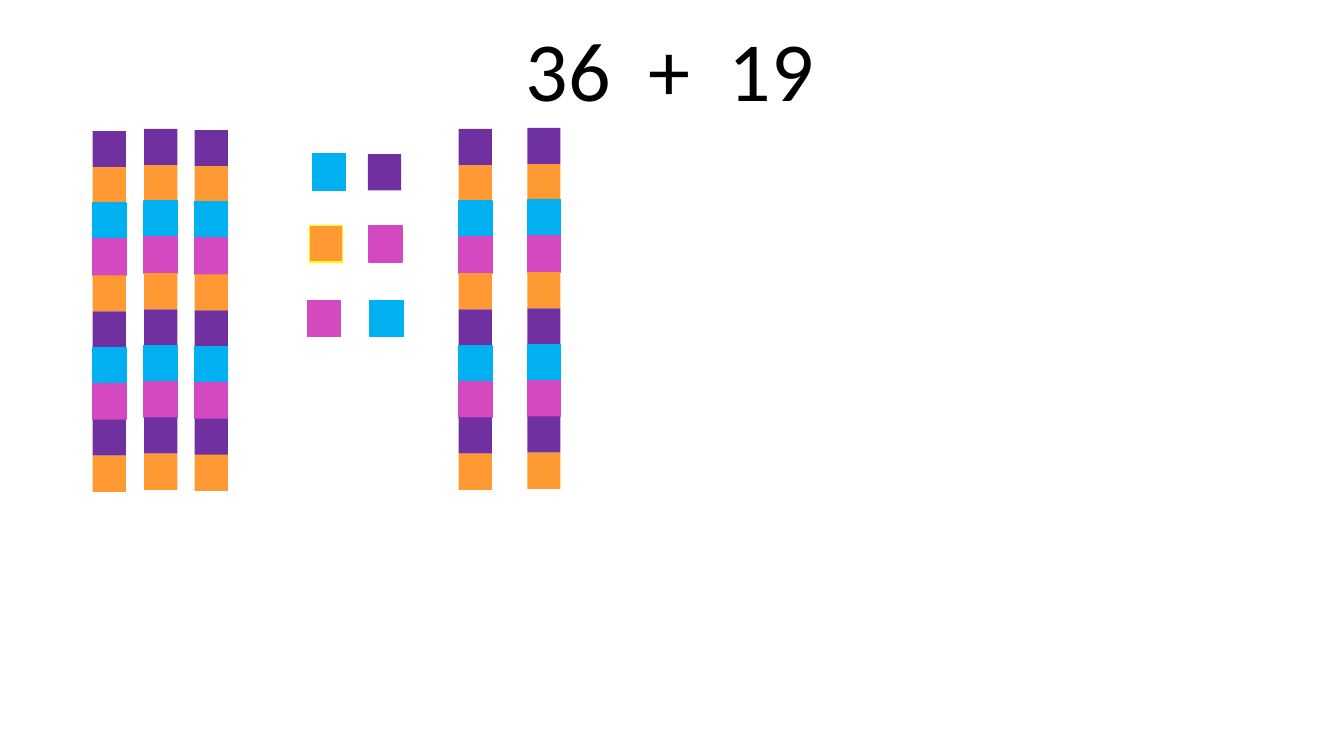
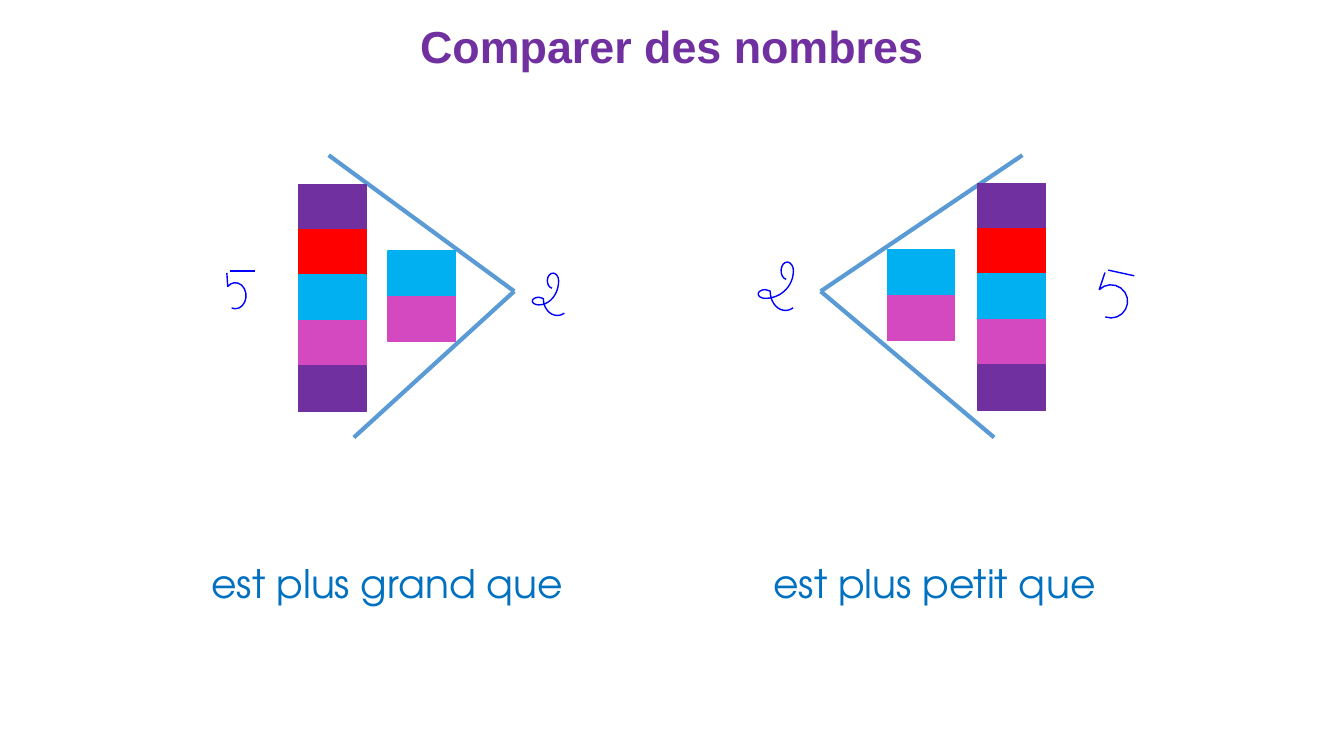
from math import cos, radians, sin

from lxml.etree import SubElement
from pptx import Presentation
from pptx.dml.color import RGBColor
from pptx.enum.shapes import MSO_CONNECTOR as Link, MSO_SHAPE as Shape
from pptx.enum.text import MSO_ANCHOR as Anchor, PP_ALIGN as Align
from pptx.oxml.ns import qn
from pptx.util import Inches, Pt

rgb = RGBColor.from_string
PURPLE, ORANGE, BLUE, PINK = "7030A0", "FF9933", "00B0F0", "D549C0"
RED, YELLOW, INK, WEDGE, LABEL = "FF0000", "FFFF00", "0000FF", "5B9BD5", "0070C0"


def write(slide, text, x, y, w, h, size, font, color, bold=False,
          align=Align.LEFT, anchor=Anchor.TOP, space=1.0):
    frame = slide.shapes.add_textbox(Inches(x), Inches(y), Inches(w), Inches(h)).text_frame
    frame.word_wrap = True
    frame.vertical_anchor = anchor
    para = frame.paragraphs[0]
    para.alignment, para.line_spacing = align, space
    run = para.add_run()
    run.text = text
    run.font.name, run.font.size, run.font.bold = font, Pt(size), bold
    run.font.color.rgb = rgb(color)


def stack(shapes, x, y, w, h, step, fills, edge=None, bare=()):
    """Pile cubes downward, edged in their own fill unless edge is given or the fill is bare."""
    for row, fill in enumerate(fills):
        cube = shapes.add_shape(Shape.RECTANGLE, Inches(x), Inches(y + row * step),
                                Inches(w), Inches(h))
        cube.shadow.inherit = False
        cube.fill.solid()
        cube.fill.fore_color.rgb = rgb(fill)
        if fill in bare and not edge:
            cube.line.fill.background()
        else:
            cube.line.color.rgb = rgb(edge or fill)
            cube.line.width = Pt(1)


deck = Presentation()
deck.slide_width, deck.slide_height = Inches(13.33), Inches(7.5)
blank = deck.slide_layouts[6]

# Addition: rods of ten and loose cubes
slide = deck.slides.add_slide(blank)
write(slide, "36  +  19", -0.02, 0.12, 13.33, 1.41, 60, "Calibri", "000000",
      align=Align.CENTER)

plain = (ORANGE, PURPLE)
wide, high = 0.33, 0.36
loose = [(3.1, 1.53, BLUE, None), (3.65, 1.53, PURPLE, None),
         (3.07, 2.24, ORANGE, YELLOW), (3.66, 2.24, PINK, None),
         (3.05, 2.98, PINK, None), (3.67, 2.98, BLUE, None)]
for x, y, fill, edge in loose:
    stack(slide.shapes, x, y, wide, high, 0, [fill], edge, plain)

ten = [PURPLE, ORANGE, BLUE, PINK, ORANGE, PURPLE, BLUE, PINK, PURPLE, ORANGE]
pitch = 3.22 / (len(ten) - 1)
for x, y in [(0.92, 1.3), (1.43, 1.28), (1.93, 1.29), (4.55, 1.28), (5.23, 1.27)]:
    rod = slide.shapes.add_group_shape()
    stack(rod.shapes, x, y, wide, high, pitch, ten, bare=plain)

# Comparison: two towers inside each wedge
slide = deck.slides.add_slide(blank)
write(slide, "Comparer des nombres", 0, 0.02, 13.33, 0.93, 32, "Arial", PURPLE,
      bold=True, align=Align.CENTER, anchor=Anchor.MIDDLE, space=0.9)

five, two = [PURPLE, RED, BLUE, PINK, PURPLE], [BLUE, PINK]
side, rise = 0.67, 0.45
wedges = [(3.26, 3.51, 5.1), (10.14, 9.86, 8.14)]
lines = []
for upper, lower, tip in wedges:
    lines += [(upper, 1.54, tip, 2.89, WEDGE, 3), (lower, 4.34, tip, 2.89, WEDGE, 3)]

# Handwritten digits: each is made of arcs (centre, radii, from and to degrees)
# in fractions of its box; degrees run clockwise from the right
strokes = []
for x, y, w, h, slant in [(2.25, 2.69, 0.28, 0.37, 0), (10.92, 2.68, 0.33, 0.47, 0.12)]:
    lines.append((x + (slant + 0.1) * w, y, x + w, y + slant * h, INK, 1))
    stem = [(slant, 0.05)]
    bowl = (0.3, 0.66, 0.38 + slant, 0.35, 225, 470)
    strokes.append((x, y, w, h, stem, [bowl]))
for x, y, w, h, lean in [(5.28, 2.71, 0.33, 0.42, 0.79), (7.52, 2.6, 0.36, 0.48, 0.97)]:
    head = (lean - 0.17, 0.18, 0.17, 0.18, 100, 360)
    body = (0.2, 0.18, lean - 0.2, 0.57, 0, 90)
    loop = (0.2, 0.66, 0.2, 0.09, 90, 270)
    tail = (0.75, 0.6, 0.42, 0.4, 180, 60)
    strokes.append((x, y, w, h, [], [head, body, loop, tail]))

for x1, y1, x2, y2, color, width in lines:
    line = slide.shapes.add_connector(Link.STRAIGHT, Inches(x1), Inches(y1),
                                      Inches(x2), Inches(y2))
    line.line.color.rgb = rgb(color)
    line.line.width = Pt(width)
    SubElement(line._element.spPr, qn("a:effectLst"))

for text, left, width in [("est plus grand que", 2, 3.93), ("est plus petit que", 7.57, 3.54)]:
    write(slide, text, left, 5.5, width, 0.57, 28, "TeX Gyre Adventor", LABEL)

for tall, short, top in [(2.96, 3.85, 1.83), (9.7, 8.8, 1.82)]:
    towers = slide.shapes.add_group_shape().shapes
    stack(towers, tall, top, side, rise, rise, five)
    stack(towers, short, top + 0.66, side, rise, rise, two)

parts = 12
for x, y, w, h, dots, arcs in strokes:
    dots = list(dots)
    for cx, cy, rx, ry, begin, end in arcs:
        for part in range(parts + 1):
            turn = radians(begin + (end - begin) * part / parts)
            dots.append((cx + rx * cos(turn), cy + ry * sin(turn)))
    start, *rest = [(Inches(x + u * w), Inches(y + v * h)) for u, v in dots]
    pen = slide.shapes.build_freeform(*start)
    pen.add_line_segments(rest, close=False)
    mark = pen.convert_to_shape()
    mark.shadow.inherit = False
    mark.fill.background()
    mark.line.color.rgb = rgb(INK)
    mark.line.width = Pt(1)

deck.save("out.pptx")
